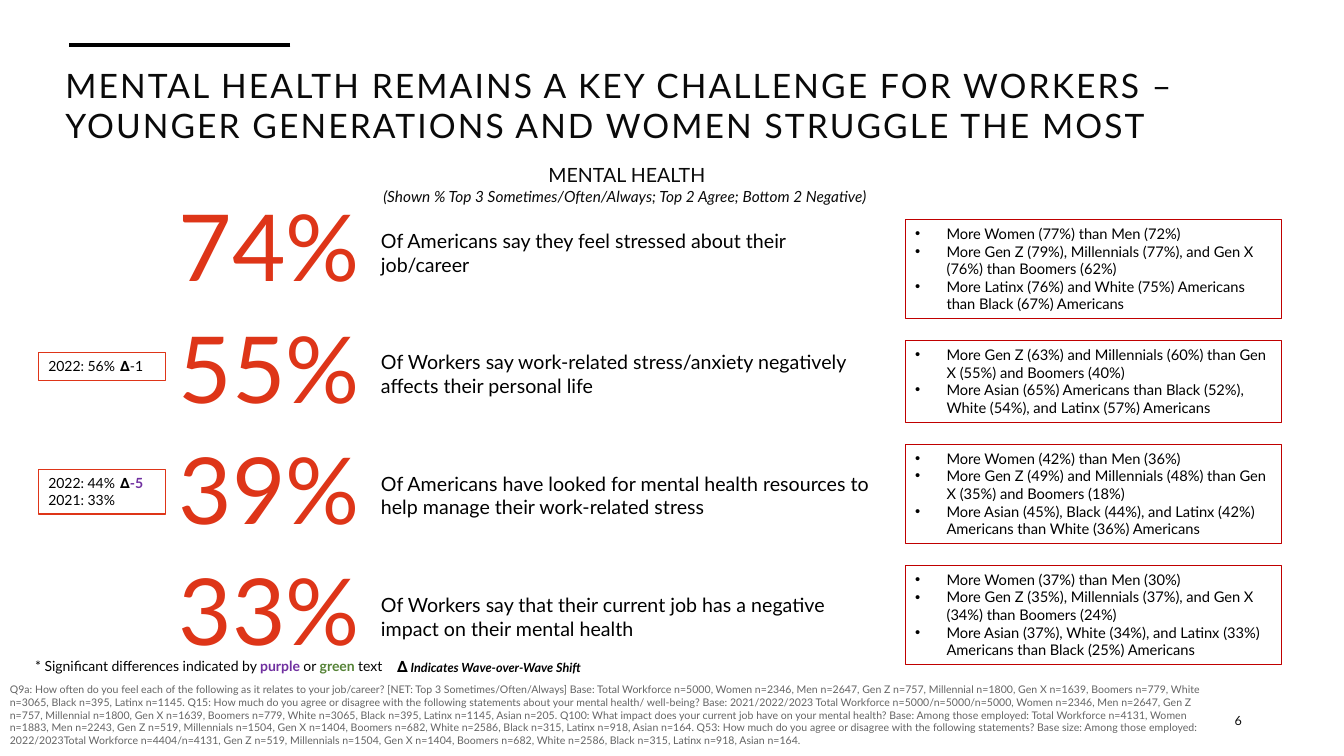
from pptx import Presentation
from pptx.dml.color import RGBColor
from pptx.enum import shapes, text
from pptx.oxml.ns import qn
from pptx.util import Pt
from lxml import etree

TITLE = ("MENTAL HEALTH REMAINS A KEY CHALLENGE FOR WORKERS – "
         "YOUNGER GENERATIONS AND WOMEN STRUGGLE THE MOST")
HEADING = "MENTAL HEALTH"
SUBHEADING = "(Shown % Top 3 Sometimes/Often/Always; Top 2 Agree; Bottom 2 Negative) "
PAGE = "6"

# Each finding: percentage, statement, differences between groups
FINDINGS = [
    ("74%", "Of Americans say they feel stressed about their job/career",
     ["More Women (77%) than Men (72%)",
      "More Gen Z (79%), Millennials (77%), and Gen X (76%) than Boomers (62%)",
      "More Latinx (76%) and White (75%) Americans than Black (67%) Americans"]),
    ("55%", "Of Workers say work-related stress/anxiety negatively affects their personal life",
     ["More Gen Z (63%) and Millennials (60%) than Gen X (55%) and Boomers (40%)",
      "More Asian (65%) Americans than Black (52%), White (54%), and Latinx (57%) Americans"]),
    ("39%", "Of Americans have looked for mental health resources to help manage their "
            "work-related stress",
     ["More Women (42%) than Men (36%)",
      "More Gen Z (49%) and Millennials (48%) than Gen X (35%) and Boomers (18%)",
      "More Asian (45%), Black (44%), and Latinx (42%) Americans than White (36%) Americans"]),
    ("33%", "Of Workers say that their current job has a negative impact on their mental health",
     ["More Women (37%) than Men (30%)",
      "More Gen Z (35%), Millennials (37%), and Gen X (34%) than Boomers (24%)",
      "More Asian (37%), White (34%), and Latinx (33%) Americans than Black (25%) Americans"]),
]
DETAIL_FRAMES = [(157, 70.5), (243.4, 58.5), (317.5, 70.5), (404, 70.5)]  # top, height

# Each past wave: top, height, lines, shift, style of the shift
WAVES = [
    (252, 19.5, ["2022: 56%"], "-1", "small"),
    (335.5, 31.7, ["2022: 44%", "2021: 33%"], "-5", "purple"),
]

LEGEND = [("* Significant differences indicated by ", "small"), ("purple ", "purple"),
          ("or ", "small"), ("green ", "green"), ("text", "small")]
SHIFT_LEGEND = [("∆", "delta"), (" Indicates Wave-over-Wave Shift", "shift_note")]

# One entry for each survey question
FOOTNOTES = [
    "Q9a: How often do you feel each of the following as it relates to your job/career? "
    "[NET: Top 3 Sometimes/Often/Always] Base: Total Workforce n=5000, Women n=2346, Men n=2647, "
    "Gen Z n=757, Millennial n=1800, Gen X n=1639, Boomers n=779, White n=3065, Black n=395, "
    "Latinx n=1145.",
    "Q15: How much do you agree or disagree with the following statements about "
    "your mental health/ well-being? Base: 2021/2022/2023 Total Workforce n=5000/n=5000/n=5000, "
    "Women n=2346, Men n=2647, Gen Z n=757, Millennial n=1800, Gen X n=1639, Boomers n=779, "
    "White n=3065, Black n=395, Latinx n=1145, Asian n=205.",
    "Q100: What impact does your current "
    "job have on your mental health? Base: Among those employed: Total Workforce n=4131, "
    "Women n=1883, Men n=2243, Gen Z n=519, Millennials n=1504, Gen X n=1404, Boomers n=682, "
    "White n=2586, Black n=315, Latinx n=918, Asian n=164.",
    "Q53: How much do you agree or disagree "
    "with the following statements? Base size: Among those employed: 2022/2023Total Workforce "
    "n=4404/n=4131, Gen Z n=519, Millennials n=1504, Gen X n=1404, Boomers n=682, White n=2586, "
    "Black n=315, Latinx n=918, Asian n=164.",
]

THEME = {
    "font": "Lato",
    "rule": "000000", "detail_line": "C00000", "wave_line": "DE3518",
    # Text styles: size, colour, bold, italic
    "title": (24, "0A0A0A", False, False),
    "heading": (14, "0A0A0A", False, False),
    "subheading": (11, "0A0A0A", False, True),
    "page": (9, "0A0A0A", False, False),
    "percent": (66, "DE3518", False, False),
    "statement": (14, "000000", False, False),
    "detail": (10.5, "000000", False, False),
    "small": (10, "000000", False, False),
    "small_delta": (10, "000000", True, False),
    "purple": (10, "7030A0", True, False),
    "green": (10, "548235", True, False),
    "delta": (11, "000000", True, False),
    "shift_note": (9, "000000", True, True),
    "footnote": (7.5, "646464", False, False),
}
LEFT, CENTER, RIGHT = text.PP_ALIGN.LEFT, text.PP_ALIGN.CENTER, text.PP_ALIGN.RIGHT
ROW_TOP, ROW_PITCH, STATEMENT_DROP = 131.8, 86.7, 28.2
BULLET_INDENT = 22.5


def color(name):
    return RGBColor.from_string(name)


def fill_text(shape, paragraphs, align=LEFT):
    """Write paragraphs, each a list of (wording, style name) runs."""
    frame = shape.text_frame
    frame.word_wrap = True
    for index, runs in enumerate(paragraphs):
        paragraph = frame.add_paragraph() if index else frame.paragraphs[0]
        paragraph.alignment = align
        for wording, style in runs:
            run = paragraph.add_run()
            run.text = wording
            size, ink, run.font.bold, run.font.italic = THEME[style]
            run.font.name, run.font.size = THEME["font"], Pt(size)
            run.font.color.rgb = color(ink)
    return frame


def add_text(parent, at, paragraphs, align=LEFT):
    return fill_text(parent.add_textbox(*map(Pt, at)), paragraphs, align)


def add_outlined(parent, at, paragraphs, line):
    shape = parent.add_shape(shapes.MSO_SHAPE.RECTANGLE, *map(Pt, at))
    shape.shadow.inherit = False
    shape.fill.background()
    shape.line.color.rgb, shape.line.width = color(line), Pt(0.75)
    frame = fill_text(shape, paragraphs)
    frame.vertical_anchor = text.MSO_ANCHOR.TOP
    return frame


def add_bullets(frame):
    for paragraph in frame.paragraphs:
        properties = paragraph._p.get_or_add_pPr()
        properties.set("marL", str(Pt(BULLET_INDENT)))
        properties.set("indent", str(-Pt(BULLET_INDENT)))
        etree.SubElement(properties, qn("a:buFont")).set("typeface", "Arial")
        etree.SubElement(properties, qn("a:buChar")).set("char", "•")


def add_header(canvas):
    rule = canvas.add_connector(shapes.MSO_CONNECTOR.STRAIGHT, Pt(207.5), Pt(32.4), Pt(49), Pt(32.4))
    rule.line.color.rgb, rule.line.width = color(THEME["rule"]), Pt(3)
    etree.SubElement(rule._element.spPr, qn("a:effectLst"))
    title = add_text(canvas, (39.6, 42.5, 894, 65.5), [[(TITLE, "title")]])
    title.paragraphs[0].runs[0].font._element.set("spc", "150")
    add_text(canvas, (257.8, 113, 380, 37.5),
             [[(HEADING, "heading")], [(SUBHEADING, "subheading")]], CENTER)


def add_findings(canvas):
    for row, (percent, statement, details) in enumerate(FINDINGS):
        top = ROW_TOP + row * ROW_PITCH
        number = add_text(canvas, (108, top, 168.5, 95), [[(percent, "percent")]], CENTER)
        number.paragraphs[0].space_after = Pt(12)
        add_text(canvas, (265, top + STATEMENT_DROP, 365.8, 41), [[(statement, "statement")]])
        detail_top, height = DETAIL_FRAMES[row]
        add_bullets(add_outlined(canvas, (646.6, detail_top, 268.6, height),
                                 [[(detail, "detail")] for detail in details],
                                 THEME["detail_line"]))


def add_waves(canvas):
    for top, height, lines, shift, style in WAVES:
        group = canvas.add_group_shape().shapes
        add_outlined(group, (27.4, top, 90.7, height),
                     [[(line, "small")] for line in lines], THEME["wave_line"])
        add_text(group, (70.6, top, 46.8, 19.5), [[("∆", "small_delta"), (shift, style)]], CENTER)


def add_footer(canvas):
    add_text(canvas, (18, 465.8, 272, 19.5), [LEGEND])
    add_text(canvas, (259.2, 465.8, 162.7, 20.5), [SHIFT_LEGEND], RIGHT)
    add_text(canvas, (0, 484.6, 868.3, 52.5), [[(" ".join(FOOTNOTES), "footnote")]])
    page = add_text(canvas, (678.2, 500.4, 216, 28.8), [[(PAGE, "page")]], RIGHT)
    page.vertical_anchor = text.MSO_ANCHOR.MIDDLE


def main():
    presentation = Presentation()
    presentation.slide_width, presentation.slide_height = Pt(960), Pt(540)
    slide = presentation.slides.add_slide(presentation.slide_layouts[6])
    for add_part in (add_header, add_findings, add_waves, add_footer):
        add_part(slide.shapes)
    presentation.save("out.pptx")


if __name__ == "__main__":
    main()
